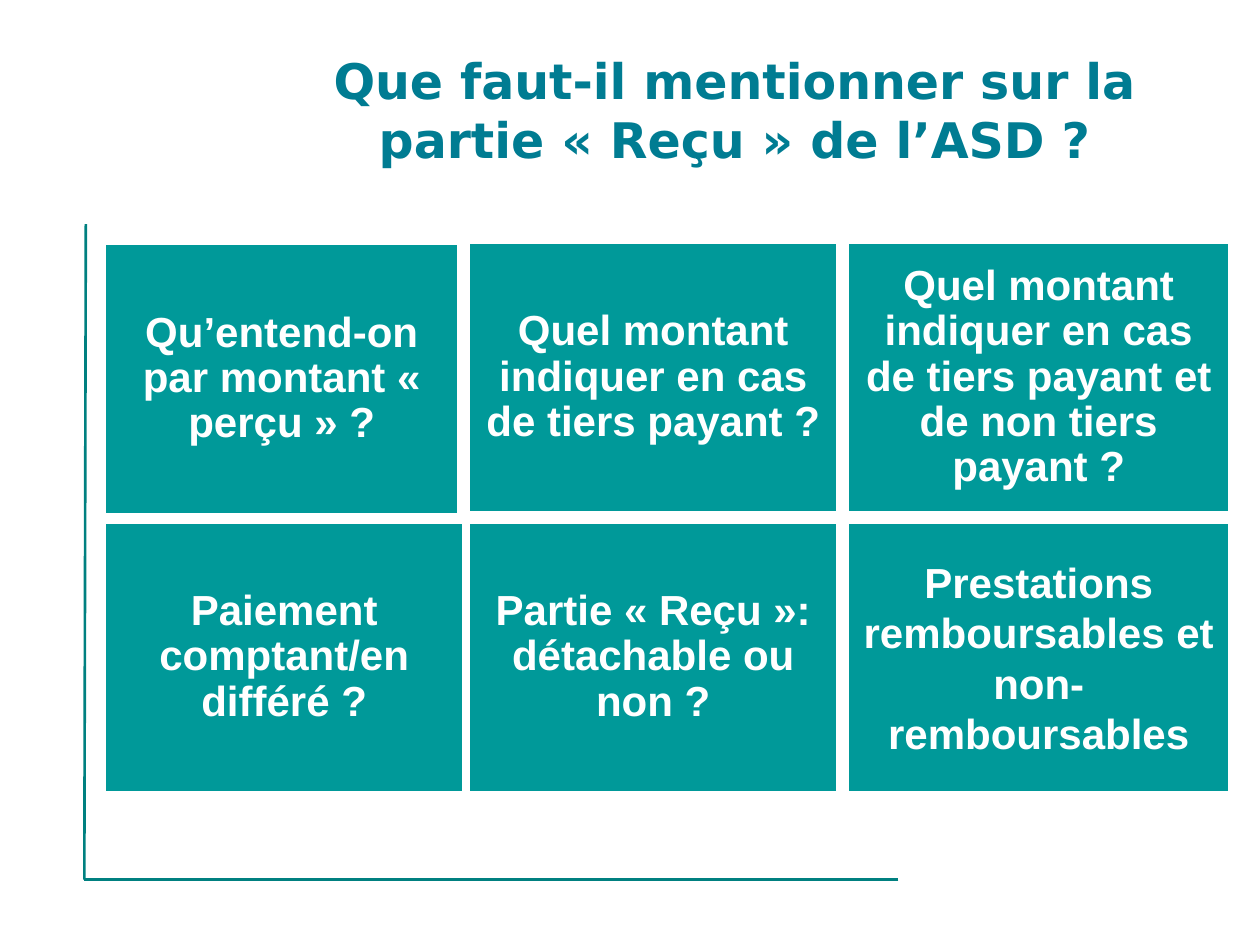
import pptx
import pptx.util
import pptx.dml.color
import pptx.enum.shapes
import pptx.enum.text
import pptx.oxml
import pptx.oxml.ns

Cm, Pt = pptx.util.Cm, pptx.util.Pt
COLOURS = {"title": "007C92", "tile": "009999", "rule": "008080", "white": "FFFFFF"}


def rgb(name):
    return pptx.dml.color.RGBColor.from_string(COLOURS[name])


def write_text(shape, text, size, font, colour, line_spacing=None):
    frame = shape.text_frame
    frame.word_wrap = True
    frame.vertical_anchor = pptx.enum.text.MSO_ANCHOR.MIDDLE
    paragraph = frame.paragraphs[0]
    paragraph.alignment = pptx.enum.text.PP_ALIGN.CENTER
    if line_spacing:
        paragraph.line_spacing = line_spacing
    run = paragraph.add_run()
    run.text = text
    run.font.size = Pt(size)
    run.font.name = font
    run.font.bold = True
    run.font.color.rgb = rgb(colour)


presentation = pptx.Presentation()
presentation.slide_width = Cm(25.4)
presentation.slide_height = Cm(19.05)
slide = presentation.slides.add_slide(presentation.slide_layouts[6])

# Corner rules: left side and bottom
corner = (1.7, 17.73)
for start_x, start_y in [(1.73, 4.52), (18.11, 17.73)]:
    rule = slide.shapes.add_connector(
        pptx.enum.shapes.MSO_CONNECTOR.STRAIGHT,
        Cm(start_x), Cm(start_y), Cm(corner[0]), Cm(corner[1]))
    rule.line.color.rgb = rgb("rule")
    rule.line.width = Pt(1.5)
    rule._element.spPr.append(pptx.oxml.parse_xml(
        f'<a:effectLst {pptx.oxml.ns.nsdecls("a")}/>'))

# Title
title = slide.shapes.add_textbox(Cm(4.9), Cm(1.12), Cm(19.81), Cm(2.16))
write_text(title, "Que faut-il mentionner sur la partie « Reçu » de l’ASD ?",
           size=28, font="DejaVu Sans", colour="title")

# Question tiles: left, top, width, line spacing, text
tile_height = 5.46
left_edges = (2.11, 9.45, 17.09)
top_row, bottom_row = 4.88, 10.52
tiles = [
    (left_edges[0], top_row + 0.03, 7.14, 0.9, "Qu’entend-on par montant « perçu » ?"),
    (left_edges[1], top_row, 7.44, 0.9, "Quel montant indiquer en cas de tiers payant ?"),
    (left_edges[2], top_row, 7.7, 0.9,
     "Quel montant indiquer en cas de tiers payant et de non tiers payant ?"),
    (left_edges[0], bottom_row, 7.24, 0.9, "Paiement comptant/en différé ?"),
    (left_edges[1], bottom_row, 7.44, 0.9, "Partie « Reçu »: détachable ou non ?"),
    (left_edges[2], bottom_row, 7.7, None,
     "Prestations remboursables et non-remboursables"),
]
for left, top, width, line_spacing, text in tiles:
    tile = slide.shapes.add_shape(
        pptx.enum.shapes.MSO_SHAPE.RECTANGLE,
        Cm(left), Cm(top), Cm(width), Cm(tile_height))
    tile.shadow.inherit = False
    tile.fill.solid()
    tile.fill.fore_color.rgb = rgb("tile")
    tile.line.color.rgb = rgb("white")
    tile.line.width = Pt(2)
    write_text(tile, text, size=24, font="Arial", colour="white",
               line_spacing=line_spacing)

presentation.save("out.pptx")
